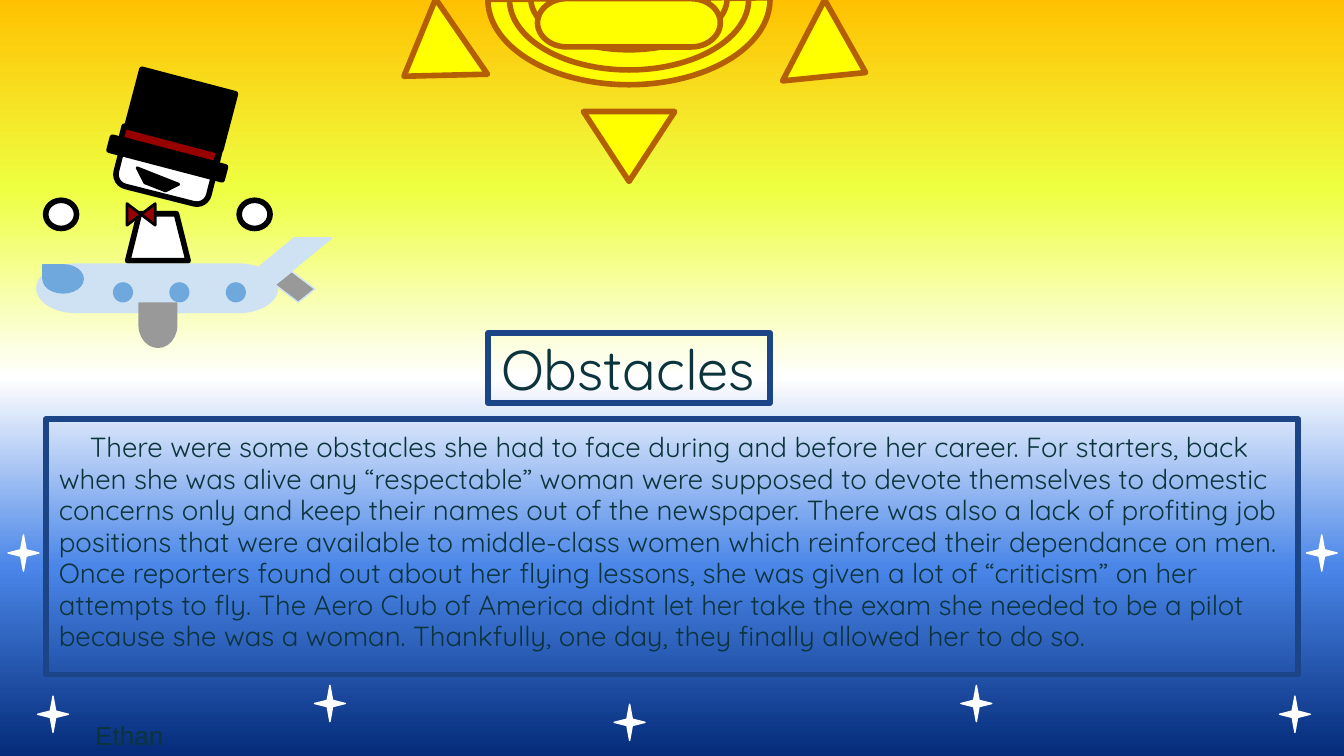
from dataclasses import dataclass

from lxml import etree
from pptx import Presentation
from pptx.dml.color import RGBColor
from pptx.enum.shapes import MSO_SHAPE as Shape
from pptx.enum.text import MSO_ANCHOR as Anchor
from pptx.oxml.ns import qn
from pptx.util import Inches, Pt


@dataclass(frozen=True)
class Theme:
    sky: tuple = ((0, "FFC100", 100), (25, "EEFF41", 100), (50, "FFFFFF", 100),
                  (75, "4A86E8", 100), (100, "042B79", 88))
    sun: str = "FFFF00"
    sun_edge: str = "B45F06"
    frame: str = "1C4587"
    ink: str = "0C343D"
    black: str = "000000"
    white: str = "FFFFFF"
    red: str = "980000"
    plane: str = "CFE2F3"
    glass: str = "6FA8DC"
    metal: str = "999999"
    font: str = "Quicksand"
    name_font: str = "Arial"
    title_size: float = 30
    body_size: float = 14.8
    name_size: float = 14
    thick: float = 3
    medium: float = 1.5
    thin: float = 0.75


T = Theme()

BODY = (
    "There were some obstacles she had to face during and before her career. "
    "For starters, back when she was alive any “respectable” woman were supposed "
    "to devote themselves to domestic concerns only and keep their names out of "
    "the newspaper. There was also a lack of profiting job positions that were "
    "available to middle-class women which reinforced their dependance on men. "
    "Once reporters found out about her flying lessons, she was given a lot of "
    "“criticism” on her attempts to fly. The Aero Club of America didnt let her "
    "take the exam she needed to be a pilot because she was a woman. Thankfully, "
    "one day, they finally allowed her to do so."
)


def rgb(color):
    return RGBColor.from_string(color)


def paint_sky(s):
    fill = s.background.fill
    fill.gradient()
    fill.gradient_angle = 270
    stops = next(s._element.iter(qn("a:gsLst")))
    for old in list(stops):
        stops.remove(old)
    for pos, color, alpha in T.sky:
        stop = etree.SubElement(stops, qn("a:gs"), pos=str(pos * 1000))
        clr = etree.SubElement(stop, qn("a:srgbClr"), val=color)
        if alpha < 100:
            etree.SubElement(clr, qn("a:alpha"), val=str(alpha * 1000))


def add_figure(s, kind, box, fill, line=None, width=T.thick, rot=0, flip=False, adj=()):
    sp = s.shapes.add_shape(kind, *map(Inches, box))
    sp.shadow.inherit = False
    sp.rotation = rot
    for i, value in enumerate(adj):
        sp.adjustments[i] = value
    if flip:
        sp._element.spPr.find(qn("a:xfrm")).set("flipH", "1")
    sp.fill.solid()
    sp.fill.fore_color.rgb = rgb(fill)
    if line:
        sp.line.color.rgb = rgb(line)
        sp.line.width = Pt(width)
    else:
        sp.line.fill.background()
    return sp


def add_text(s, box, text, size, font=T.font, frame=None, anchor=Anchor.TOP, wrap=True):
    sp = s.shapes.add_textbox(*map(Inches, box))
    if frame:
        sp.line.color.rgb = rgb(frame)
        sp.line.width = Pt(T.thick)
    tf = sp.text_frame
    tf.word_wrap = wrap
    tf.vertical_anchor = anchor
    tf.margin_left = tf.margin_right = tf.margin_top = tf.margin_bottom = Inches(0.1)
    p = tf.paragraphs[0]
    p.text = text
    p.font.name = font
    p.font.size = Pt(size)
    p.font.color.rgb = rgb(T.ink)
    return p


def add_body(s):
    p = add_text(s, (0.34, 3.12, 9.32, 1.9), BODY, T.body_size, frame=T.frame)
    p.line_spacing = 0.95
    p.space_after = Pt(12)
    p._p.get_or_add_pPr().set("indent", str(Inches(0.23)))


def add_sun(s):
    rings = ((3.63, -0.64, 2.1, 1.27), (3.79, -0.53, 1.78, 1.05),
             (3.95, -0.39, 1.46, 0.76), (4.08, -0.27, 1.19, 0.52))
    for box in rings:
        add_figure(s, Shape.BLOCK_ARC, box, T.sun, T.sun_edge, rot=180, flip=True,
                   adj=(108, 0.387, 0.189))
    add_figure(s, Shape.FLOWCHART_TERMINATOR, (4, -0.01, 1.36, 0.36), T.sun, T.sun_edge)
    for x, y, rot in ((4.34, 0.83, 180), (5.87, 0.16, 117.4), (2.88, 0.16, 235.4)):
        add_figure(s, Shape.FLOWCHART_EXTRACT, (x, y, 0.68, 0.52), T.sun, T.sun_edge,
                   rot=rot, flip=True)


def add_pilot(s):
    tilt = 14.7
    add_figure(s, Shape.TRAPEZOID, (0.95, 1.59, 0.45, 0.35), T.white, T.black, adj=(0.25,))
    add_figure(s, Shape.ROUNDED_RECTANGLE, (0.9, 0.91, 0.71, 0.55), T.white, T.black, rot=14.2)
    add_figure(s, Shape.FLOWCHART_COLLATE, (0.97, 1.49, 0.16, 0.21), T.red, T.black,
               T.medium, rot=270)
    hat = (((0.81, 1.13, 0.87, 0.1), T.black), ((0.9, 1.03, 0.73, 0.1), T.red),
           ((0.99, 0.6, 0.72, 0.43), T.black))
    for box, fill in hat:
        add_figure(s, Shape.RECTANGLE, box, fill, T.black, rot=tilt)
    add_figure(s, Shape.DIAGONAL_STRIPE, (1.05, 1.2, 0.25, 0.22), T.black, T.black,
               T.medium, rot=242.9, adj=(0.5,))
    for x in (0.34, 1.78):
        add_figure(s, Shape.OVAL, (x, 1.49, 0.23, 0.21), T.white, T.black)


def add_plane(s):
    add_figure(s, Shape.FLOWCHART_TERMINATOR, (0.28, 1.97, 1.78, 0.35), T.plane, T.plane, T.medium)
    add_figure(s, Shape.PARALLELOGRAM, (2.09, 2.03, 0.21, 0.21), T.metal, T.plane, T.thin,
               rot=321.3, flip=True, adj=(0.25,))
    add_figure(s, Shape.DIAGONAL_STRIPE, (1.91, 1.77, 0.56, 0.46), T.plane, T.plane, T.thin,
               adj=(0.5,))
    for x in (1.26, 1.68, 0.84):
        add_figure(s, Shape.OVAL, (x, 2.1, 0.15, 0.15), T.glass, rot=180)
    add_figure(s, Shape.TEAR, (0.32, 1.97, 0.3, 0.21), T.glass, T.glass, T.thin,
               flip=True, adj=(1,))
    add_figure(s, Shape.FLOWCHART_DELAY, (1.01, 2.28, 0.33, 0.28), T.metal, T.metal, T.thin, rot=90)


def add_stars(s):
    places = ((9.52, 5.18), (0.28, 5.18), (0.06, 3.98), (9.72, 3.98),
              (4.57, 5.24), (7.15, 5.1), (2.34, 5.1))
    for x, y in places:
        add_figure(s, Shape.STAR_4_POINT, (x, y, 0.23, 0.27), T.white, T.white, T.thin,
                   adj=(0.125,))


def main():
    prs = Presentation()
    prs.slide_width = Inches(10)
    prs.slide_height = prs.slide_width * 9 // 16
    s = prs.slides.add_slide(prs.slide_layouts[6])
    paint_sky(s)
    add_text(s, (0.61, 5.25, 1.2, 0.37), "Ethan", T.name_size, font=T.name_font)
    add_body(s)
    add_sun(s)
    add_text(s, (3.63, 2.48, 2.1, 0.52), "Obstacles", T.title_size, frame=T.frame,
             anchor=Anchor.MIDDLE, wrap=False)
    add_pilot(s)
    add_plane(s)
    add_stars(s)
    prs.save("out.pptx")


if __name__ == "__main__":
    main()
